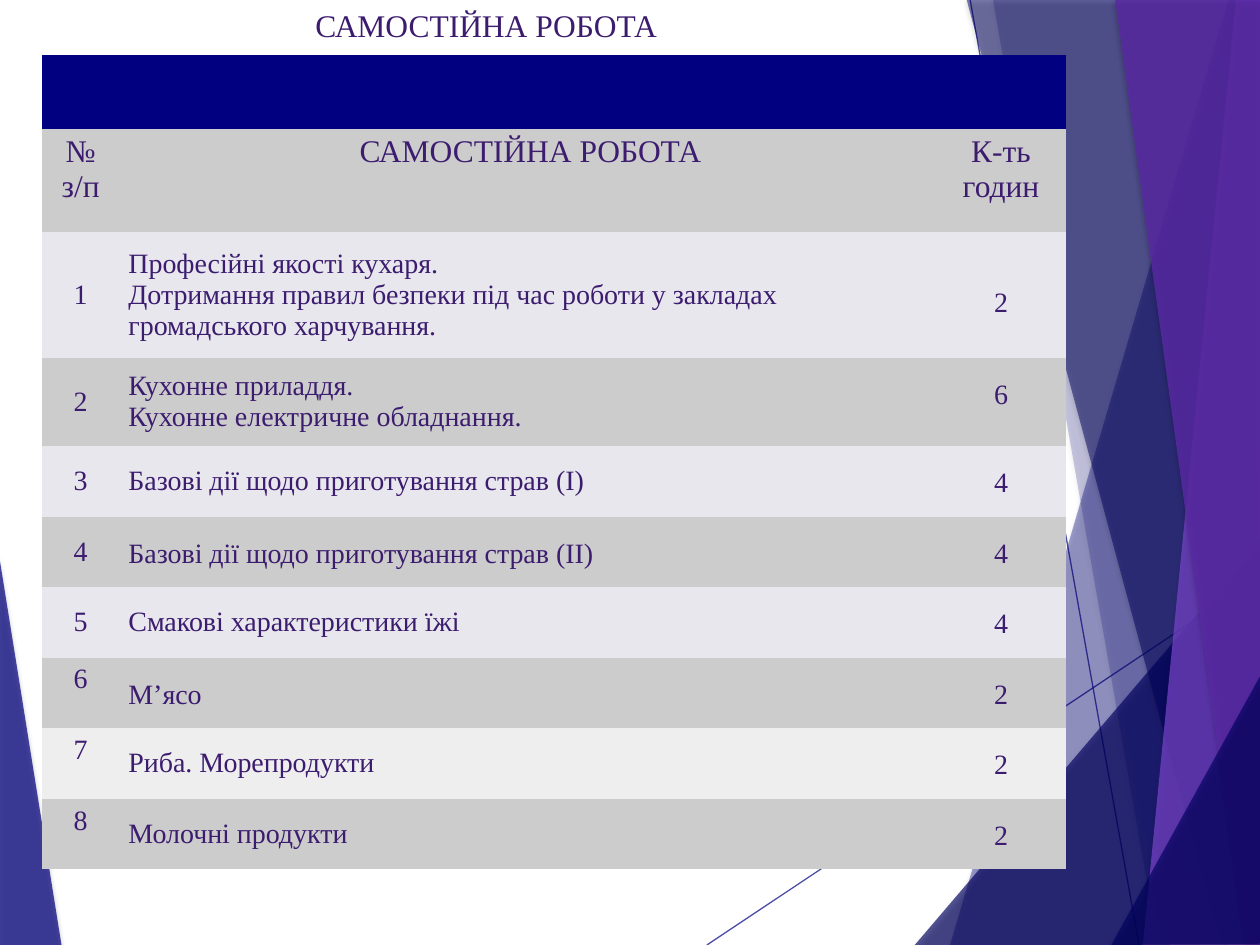
from lxml import etree
from pptx import Presentation
from pptx.dml.color import RGBColor
from pptx.enum.shapes import MSO_CONNECTOR
from pptx.enum.text import MSO_ANCHOR, PP_ALIGN
from pptx.oxml import parse_xml
from pptx.oxml.ns import nsdecls, qn
from pptx.util import Inches, Pt

MID, TOP = MSO_ANCHOR.MIDDLE, MSO_ANCHOR.TOP
LEFT, CENTER = PP_ALIGN.LEFT, PP_ALIGN.CENTER
STRAIGHT = MSO_CONNECTOR.STRAIGHT
FONT = "Times New Roman"
HUE = {"navy": "000080", "deep": "000060", "lilac": "7B46D0",
       "violet": "5A2AA6", "ink": "3C1C6F", "dark": "CCCCCC",
       "light": "E7E7ED", "pale": "EEEEEE"}

deck = Presentation()
deck.slide_width, deck.slide_height = Inches(10), Inches(7.5)
slide = deck.slides.add_slide(deck.slide_layouts[6])
unit = deck.slide_width / 1000


def paint(fmt, hue, alpha):
    fmt.solid()
    fmt.fore_color.rgb = RGBColor.from_string(HUE[hue])
    tint = fmt._xPr.find(".//" + qn("a:srgbClr"))
    etree.SubElement(tint, qn("a:alpha")).set("val", str(alpha * 1000))


def write(frame, text, size, align, gap=1, after=0):
    frame.text = text
    for para in frame.paragraphs:
        para.alignment = align
        para.line_spacing = gap
        para.space_after = Pt(after)
        para.font.size = Pt(size)
        for run in para.runs:
            run.font.name = FONT
            run.font.size = Pt(size)
            run.font.color.rgb = RGBColor.from_string(HUE["ink"])


shards = [
    ("navy", 70, [(-1, 439), (49, 751), (-1, 750)]),
    ("navy", 36, [(975, 0), (754, 750), (1002, 751), (1001, 1)]),
    ("navy", 20, [(788, -1), (919, 750), (1001, 750), (1001, -1)]),
    ("deep", 66, [(726, 750), (1000, 429), (1001, 750)]),
    ("deep", 50, [(767, -1), (969, 750), (1001, 749), (1001, -1)]),
    ("lilac", 70, [(981, -1), (907, 750), (1001, 750), (1000, -1)]),
    ("violet", 82, [(885, -1), (988, 750), (1002, 750), (1000, -1)]),
    ("deep", 66, [(882, 750), (1001, 535), (1002, 749)]),
]
rays = [(561, 750, 1001, 457), (770, 0, 904, 750)]
shade = (f'<a:effectLst {nsdecls("a")}><a:outerShdw blurRad="38100" '
         'dist="25400" dir="5400000" rotWithShape="0">'
         '<a:srgbClr val="000000"><a:alpha val="35000"/></a:srgbClr>'
         '</a:outerShdw></a:effectLst>')

for rank, (hue, alpha, points) in enumerate(shards):
    pen = slide.shapes.build_freeform(*points[0], scale=unit)
    pen.add_line_segments(points[1:], close=True)
    shard = pen.convert_to_shape()
    paint(shard.fill, hue, alpha)
    shard.line.fill.background()
    shard._element.spPr.append(parse_xml(shade))
    if rank == 0:
        for ray in rays:
            ends = [int(n * unit) for n in ray]
            line = slide.shapes.add_connector(STRAIGHT, *ends)
            line.line.width = Pt(0.75)
            paint(line.line.fill, "navy", 70)
            etree.SubElement(line._element.spPr, qn("a:effectLst"))

wides = [0.62, 6.48, 1.03]
highs = [0.58, 0.82, 1, 0.7] + [0.56] * 6
frame = slide.shapes.add_table(
    len(highs), len(wides), Inches(0.33), Inches(0.44),
    Inches(sum(wides)), Inches(sum(highs)))
table = frame.table
table.first_row = table.horz_banding = False
style = table._tbl.tblPr.find(qn("a:tableStyleId"))
style.text = "{2D5ABB26-0587-4C30-8999-92F81FD0307C}"
for col, wide in zip(table.columns, wides):
    col.width = Inches(wide)
for row, high in zip(table.rows, highs):
    row.height = Inches(high)

fills = ["navy", "dark"] + ["light", "dark"] * 3 + ["pale", "dark"]
for row, hue in zip(table.rows, fills):
    for cell in row.cells:
        cell.fill.solid()
        cell.fill.fore_color.rgb = RGBColor.from_string(HUE[hue])
table.cell(0, 0).merge(table.cell(0, 2))
write(table.cell(1, 0).text_frame, "№ з/п", 18, CENTER)
write(table.cell(1, 2).text_frame, "К-ть годин", 18, CENTER)

topics = [
    ("Професійні якості кухаря.\nДотримання правил безпеки під час роботи "
     "у закладах громадського харчування.", 2),
    ("Кухонне приладдя.\nКухонне електричне обладнання.", 6),
    ("Базові дії щодо приготування страв (І)", 4),
    ("Базові дії щодо приготування страв (ІІ)", 4),
    ("Смакові характеристики їжі", 4),
    ("М’ясо", 2),
    ("Риба. Морепродукти", 2),
    ("Молочні продукти", 2),
]
for num, (topic, hours) in enumerate(topics, 1):
    mark, name, time = table.rows[num + 1].cells
    loose = num in (4, 6)
    write(mark.text_frame, str(num), 16, CENTER)
    write(name.text_frame, topic, 16, LEFT,
          1.15 if loose else 1, 10 if loose else 0)
    write(time.text_frame, str(hours), 16, CENTER, 1.5, 10 if num == 1 else 0)
    mark.vertical_anchor = MID if num < 6 else TOP
    name.vertical_anchor = MID
    time.vertical_anchor = MID if num == 1 else TOP
    for cell in (name, time):
        cell.margin_left = cell.margin_right = Inches(0.07)

for left, top, wide in [(1.7, 0.99, 5.02), (0.63, 0, 6.46)]:
    box = slide.shapes.add_textbox(
        Inches(left), Inches(top), Inches(wide), Inches(0.4))
    box.text_frame.word_wrap = True
    write(box.text_frame, "САМОСТІЙНА РОБОТА", 18, CENTER)

deck.save("out.pptx")
